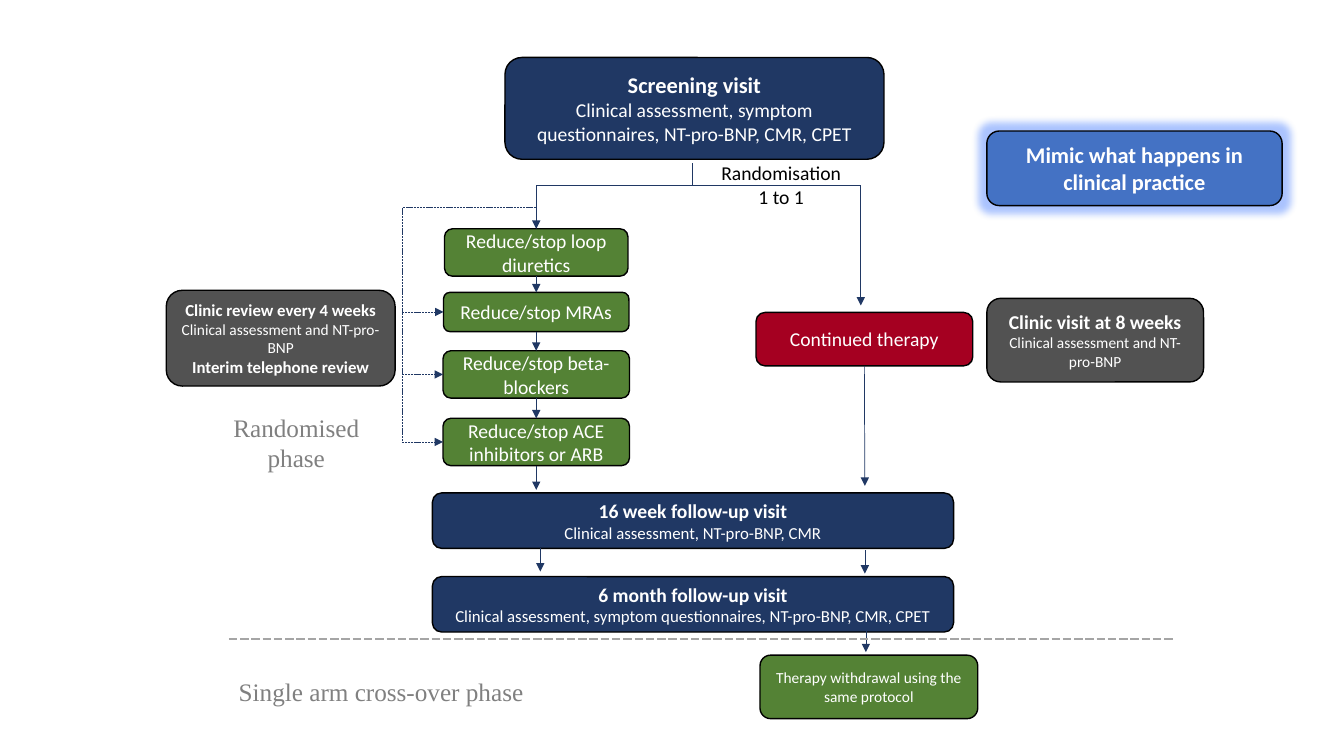
from lxml.etree import SubElement
from pptx import Presentation
from pptx.dml.color import RGBColor
from pptx.enum.dml import MSO_LINE
from pptx.enum.shapes import MSO_CONNECTOR, MSO_SHAPE
from pptx.enum.text import MSO_ANCHOR, MSO_AUTO_SIZE, PP_ALIGN
from pptx.oxml.ns import qn
from pptx.util import Inches, Pt

CELL = Inches(0.1)  # one column or row of the slide grid
COLUMNS, ROWS = 133.33, 75

NAVY, GREEN, RED, GREY, BLUE = "203864", "548235", "A50021", "525252", "4472C4"
WHITE, BLACK, LABEL_GREY, DIVIDER_GREY, GLOW = "FFFFFF", "000000", "808080", "A5A5A5", "2D6BFF"
TOP, LEFT, BOTTOM = 0, 1, 2

STEP_CENTRE = 53.2
REVIEW_RAIL = 39.9
REVIEW_TOP = 20.6
SPLIT_ROW = 18.4
STEPS = [  # text, top row, width, height
    ("Reduce/stop loop diuretics", 22.7, 18.2, 4.7),
    ("Reduce/stop MRAs", 29, 18.4, 3.9),
    ("Reduce/stop beta-blockers", 34.8, 18.5, 4.7),
    ("Reduce/stop ACE inhibitors or ARB", 41.5, 18.5, 4.7),
]


def cells(*counts):
    return [round(count * CELL) for count in counts]


def colour(value):
    return RGBColor.from_string(value)


def write(shape, lines, font_colour, font="Calibri", align=PP_ALIGN.CENTER):
    """Fill a shape with lines given as (text, size, bold)."""
    text_frame = shape.text_frame
    text_frame.text = "\n".join(text for text, _, _ in lines)
    for paragraph, (_, size, bold) in zip(text_frame.paragraphs, lines):
        paragraph.alignment = align
        for run in paragraph.runs:
            run.font.name = font
            run.font.size = Pt(size)
            run.font.bold = bold
            run.font.color.rgb = colour(font_colour)


def add_box(slide, area, fill, *lines):
    box = slide.shapes.add_shape(MSO_SHAPE.ROUNDED_RECTANGLE, *cells(*area))
    box.shadow.inherit = False
    box.fill.solid()
    box.fill.fore_color.rgb = colour(fill)
    box.line.color.rgb = colour(BLACK)
    box.line.width = Pt(1)
    box.text_frame.word_wrap = True
    box.text_frame.vertical_anchor = MSO_ANCHOR.MIDDLE
    write(box, lines, WHITE)
    return box


def add_label(slide, area, lines, font_colour, font, wrap=False, align=PP_ALIGN.CENTER):
    label = slide.shapes.add_textbox(*cells(*area))
    label.text_frame.word_wrap = wrap
    label.text_frame.auto_size = MSO_AUTO_SIZE.SHAPE_TO_FIT_TEXT
    write(label, lines, font_colour, font, align)


def add_glow(shape, radius):
    effects = shape.element.spPr.find(qn("a:effectLst"))
    glow = SubElement(effects, qn("a:glow"), rad=str(Pt(radius)))
    glow_colour = SubElement(glow, qn("a:srgbClr"), val=GLOW)
    SubElement(glow_colour, qn("a:alpha"), val="40000")


def add_line(slide, start, end, arrow=True, dashed=False, line_colour=NAVY, width=0.5,
             from_shape=None, to_shape=None):
    """Draw a line; from_shape and to_shape are (shape, side) to join."""
    line = slide.shapes.add_connector(MSO_CONNECTOR.STRAIGHT, *cells(*start, *end))
    line.line.color.rgb = colour(line_colour)
    line.line.width = Pt(width)
    if dashed:
        line.line.dash_style = MSO_LINE.SQUARE_DOT
    if arrow:
        SubElement(line.line._get_or_add_ln(), qn("a:tailEnd"), type="triangle")
    SubElement(line.element.spPr, qn("a:effectLst"))
    if from_shape:
        line.begin_connect(*from_shape)
    if to_shape:
        line.end_connect(*to_shape)


def add_withdrawal_steps(slide):
    """Stack the step boxes, join them and link them to the review rail."""
    boxes = []
    for text, top, width, height in STEPS:
        area = (STEP_CENTRE - width / 2, top, width, height)
        box = add_box(slide, area, GREEN, (text, 14, False))
        middle = top + height / 2
        if boxes:
            add_line(slide, (STEP_CENTRE, top), (STEP_CENTRE, top),
                     from_shape=(boxes[-1], BOTTOM), to_shape=(box, TOP))
            add_line(slide, (REVIEW_RAIL, middle), (area[0], middle), dashed=True,
                     to_shape=(box, LEFT))
        boxes.append(box)
    add_line(slide, (STEP_CENTRE, REVIEW_TOP), (REVIEW_RAIL, REVIEW_TOP), arrow=False, dashed=True)
    add_line(slide, (REVIEW_RAIL, REVIEW_TOP), (REVIEW_RAIL, middle), arrow=False, dashed=True)
    add_line(slide, (STEP_CENTRE, SPLIT_ROW), (STEP_CENTRE, 22.7), to_shape=(boxes[0], TOP))
    add_line(slide, (STEP_CENTRE, 46.2), (STEP_CENTRE, 48.6), from_shape=(boxes[-1], BOTTOM))


def add_randomisation(slide):
    add_box(slide, (50.1, 5.7, 37.6, 10.1), NAVY,
            ("Screening visit", 16, True),
            ("Clinical assessment, symptom questionnaires, NT-pro-BNP, CMR, CPET", 14, False))
    add_label(slide, (70.1, 15.5, 14.8, 5.7), [("Randomisation 1 to 1", 14, False)],
              BLACK, "Calibri", wrap=True)
    add_line(slide, (68.7, 16.2), (68.7, SPLIT_ROW), arrow=False)
    add_line(slide, (STEP_CENTRE, SPLIT_ROW), (85.4, SPLIT_ROW), arrow=False)
    add_line(slide, (85.4, SPLIT_ROW), (85.4, 30.3))


def add_continued_arm(slide):
    therapy = add_box(slide, (75, 31, 21.5, 5.3), RED, ("Continued therapy", 14, False))
    add_line(slide, (85.8, 36.3), (85.8, 48.2), from_shape=(therapy, BOTTOM))


def add_reviews(slide):
    add_box(slide, (16.5, 28.8, 22.7, 9.5), GREY,
            ("Clinic review every 4 weeks", 12, True),
            ("Clinical assessment and NT-pro-BNP", 11, False),
            ("Interim telephone review", 12, True))
    add_box(slide, (97.9, 29.6, 21.5, 8.3), GREY,
            ("Clinic visit at 8 weeks", 14, True),
            ("Clinical assessment and NT-pro-BNP", 11, False))


def add_follow_up(slide):
    visits = [
        (48.9, "16 week follow-up visit", "Clinical assessment, NT-pro-BNP, CMR"),
        (57.2, "6 month follow-up visit",
         "Clinical assessment, symptom questionnaires, NT-pro-BNP, CMR, CPET"),
    ]
    for top, title, detail in visits:
        add_box(slide, (42.9, top, 51.7, 5.5), NAVY, (title, 14, True), (detail, 12, False))
    for column, top in [(53.6, 54.4), (85.8, 54.6), (85.9, 62.4)]:
        add_line(slide, (column, top), (column, top + 2.3))


def add_cross_over(slide):
    add_box(slide, (75.4, 65, 21.6, 6.3), GREEN,
            ("Therapy withdrawal using the same protocol", 11, False))
    add_line(slide, (22.7, 63.4), (116.6, 63.4), arrow=False, dashed=True,
             line_colour=DIVIDER_GREY, width=2)


def add_phase_labels(slide):
    add_label(slide, (22.1, 40.4, 14.6, 7.1),
              [("Randomised", 18, False), ("phase", 18, False)], LABEL_GREY, "Times New Roman")
    add_label(slide, (22.7, 66.6, 30.6, 4), [("Single arm cross-over phase", 18, False)],
              LABEL_GREY, "Times New Roman", align=PP_ALIGN.LEFT)


def main():
    presentation = Presentation()
    presentation.slide_width, presentation.slide_height = cells(COLUMNS, ROWS)
    slide = presentation.slides.add_slide(presentation.slide_layouts[6])
    add_randomisation(slide)
    add_continued_arm(slide)
    add_withdrawal_steps(slide)
    add_reviews(slide)
    add_follow_up(slide)
    add_cross_over(slide)
    add_phase_labels(slide)
    practice = add_box(slide, (97.9, 13, 29.3, 7.4), BLUE,
                       ("Mimic what happens in clinical practice", 16, True))
    add_glow(practice, 11)
    presentation.save("out.pptx")


if __name__ == "__main__":
    main()
